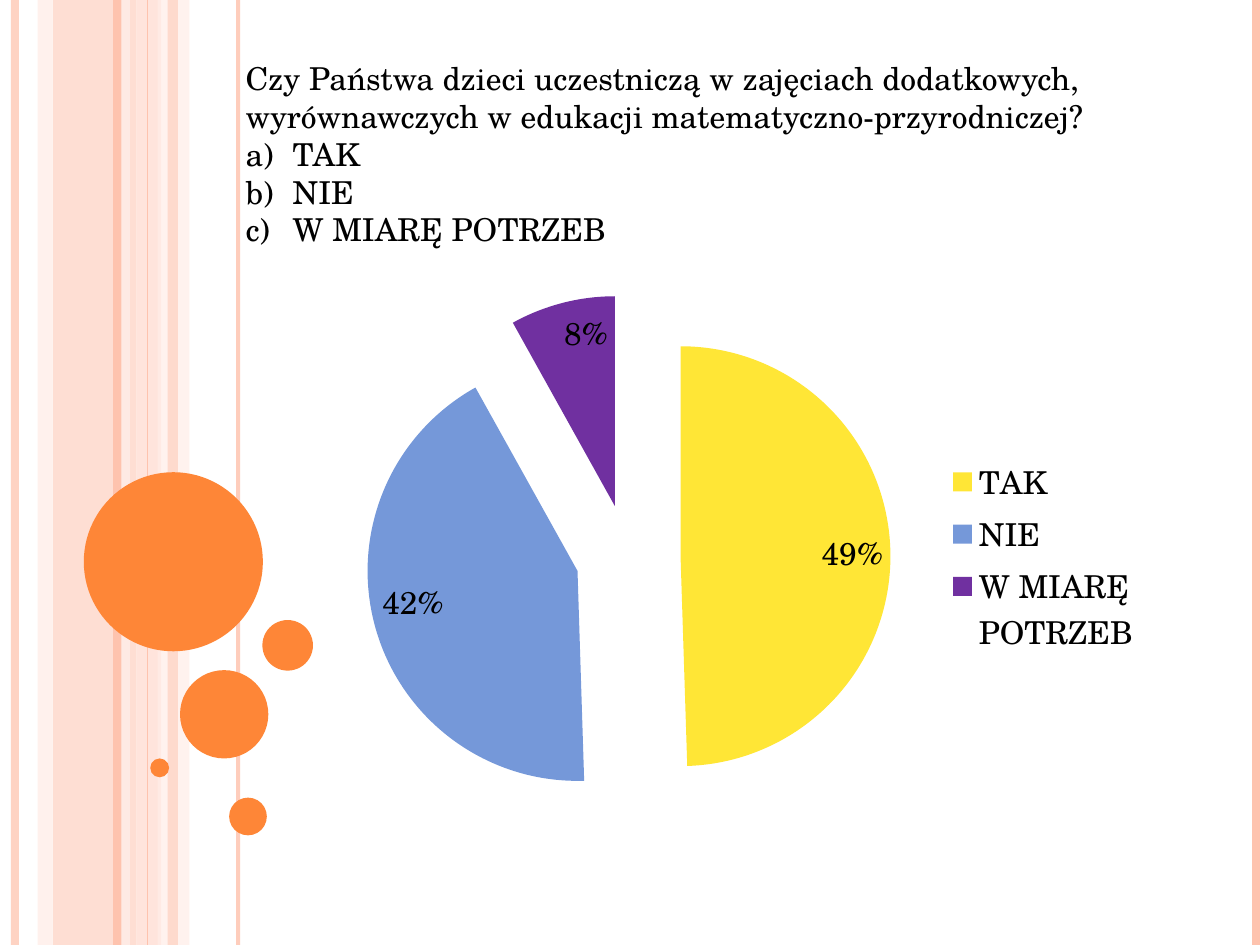
from dataclasses import dataclass

from lxml.etree import SubElement
from pptx import Presentation
from pptx.chart.data import CategoryChartData
from pptx.dml.color import RGBColor
from pptx.enum.chart import XL_CHART_TYPE, XL_LABEL_POSITION, XL_LEGEND_POSITION
from pptx.enum.shapes import MSO_CONNECTOR, MSO_SHAPE
from pptx.oxml import parse_xml
from pptx.oxml.ns import nsdecls, qn
from pptx.util import Cm, Pt


@dataclass(frozen=True)
class Theme:
    font: str = "TeX Gyre Schola"
    text_size: int = 18
    text: str = "000000"
    salmon: str = "FEC3AE"
    blush: str = "FFD9CE"
    pale: str = "FFEDE8"
    orange: str = "FE8637"
    slices: tuple = ("FFE636", "7598D9", "7030A0")


THEME = Theme()
SLIDE_WIDTH, SLIDE_HEIGHT = 25.4, 19.05

QUESTION = ("Czy Państwa dzieci uczestniczą w zajęciach dodatkowych, "
            "wyrównawczych w edukacji matematyczno-przyrodniczej?")
RESULTS = {"TAK": 0.49, "NIE": 0.42, "W MIARĘ POTRZEB": 0.08}

# left, width, colour, opacity in percent
BANDS = [
    (1.06, 1.69, THEME.salmon, 54),
    (0.76, 0.29, THEME.blush, 36),
    (2.75, 0.5, THEME.blush, 70),
    (3.18, 0.64, THEME.pale, 71),
]
NARROW_BAND = (3.38, 0.21, THEME.salmon, 51)

# x, line width in points, colour, opacity in percent
STRIPES = [
    (0.3, 4.5, THEME.salmon, 73),
    (2.54, 4.5, THEME.pale, 83),
    (2.36, 4.5, THEME.salmon, 100),
    (4.8, 2.25, THEME.salmon, 82),
    (2.97, 0.75, THEME.salmon, 100),
    (25.32, 4.5, THEME.salmon, 100),
]

# left, top, diameter
BUBBLES = [
    (1.69, 9.52, 3.61),
    (3.63, 13.51, 1.78),
    (3.03, 15.29, 0.38),
    (4.62, 16.08, 0.76),
    (5.29, 12.5, 1.02),
]


def set_fill(fill, color, opacity=100):
    fill.solid()
    fill.fore_color.rgb = RGBColor.from_string(color)
    if opacity < 100:
        for color_element in fill._xPr.iter(qn("a:srgbClr")):
            SubElement(color_element, qn("a:alpha"), val=str(opacity * 1000))


def add_filled_shape(slide, kind, left, top, width, height, color, opacity=100):
    shape = slide.shapes.add_shape(kind, Cm(left), Cm(top), Cm(width), Cm(height))
    shape.shadow.inherit = False
    shape.line.fill.background()
    set_fill(shape.fill, color, opacity)


def add_band(slide, left, width, color, opacity):
    add_filled_shape(slide, MSO_SHAPE.RECTANGLE, left, 0, width, SLIDE_HEIGHT,
                     color, opacity)


def add_stripe(slide, x, width, color, opacity):
    stripe = slide.shapes.add_connector(
        MSO_CONNECTOR.STRAIGHT, Cm(x), Cm(0), Cm(x), Cm(SLIDE_HEIGHT))
    stripe.line.width = Pt(width)
    set_fill(stripe.line.fill, color, opacity)
    SubElement(stripe._element.spPr, qn("a:effectLst"))


def format_font(font, size=THEME.text_size, color=THEME.text):
    font.name = THEME.font
    font.size = Pt(size)
    font.color.rgb = RGBColor.from_string(color)


def write_paragraph(paragraph, text, lettered=False):
    run = paragraph.add_run()
    run.text = text
    format_font(run.font)
    if lettered:
        properties = paragraph._p.get_or_add_pPr()
        properties.set("marL", str(Cm(0.95)))
        properties.set("indent", str(-Cm(0.95)))
        SubElement(properties, qn("a:buFont"), typeface=THEME.font)
        SubElement(properties, qn("a:buAutoNum"), type="alphaLcParenR")


def add_question(slide):
    box = slide.shapes.add_textbox(Cm(4.7), Cm(1.07), Cm(20.7), Cm(4.88))
    frame = box.text_frame
    frame.word_wrap = True
    write_paragraph(frame.paragraphs[0], QUESTION)
    for answer in RESULTS:
        write_paragraph(frame.add_paragraph(), answer, lettered=True)


def add_pie(slide):
    data = CategoryChartData(number_format="0%")
    data.categories = list(RESULTS)
    data.add_series("Series 1", list(RESULTS.values()))
    chart = slide.shapes.add_chart(XL_CHART_TYPE.PIE, Cm(6.32), Cm(5.59),
                                   Cm(16.94), Cm(11.28), data).chart
    format_font(chart.font)
    chart.has_title = False
    chart.has_legend = True
    chart.legend.position = XL_LEGEND_POSITION.RIGHT
    chart.legend.include_in_layout = False

    # Slices and their distance from the centre
    plot = chart.plots[0]
    plot.vary_by_categories = True
    series = plot.series[0]
    for index, color in enumerate(THEME.slices):
        set_fill(series.points[index].format.fill, color)
    first_point = series._element.find(qn("c:dPt"))
    first_point.addprevious(parse_xml(f'<c:explosion {nsdecls("c")} val="25"/>'))

    # Value labels
    plot.has_data_labels = True
    labels = plot.data_labels
    labels.show_value = True
    labels.show_percentage = False
    labels.number_format = "0%"
    labels.number_format_is_linked = False
    labels.position = XL_LABEL_POSITION.INSIDE_END
    format_font(labels.font)


def main():
    presentation = Presentation()
    presentation.slide_width = Cm(SLIDE_WIDTH)
    presentation.slide_height = Cm(SLIDE_HEIGHT)
    slide = presentation.slides.add_slide(presentation.slide_layouts[6])

    # Striped margin
    for band in BANDS:
        add_band(slide, *band)
    for stripe in STRIPES:
        add_stripe(slide, *stripe)
    add_band(slide, *NARROW_BAND)

    # Bubbles
    for left, top, diameter in BUBBLES:
        add_filled_shape(slide, MSO_SHAPE.OVAL, left, top, diameter, diameter,
                         THEME.orange)

    # Question and results
    add_question(slide)
    add_pie(slide)

    presentation.save("out.pptx")


if __name__ == "__main__":
    main()
